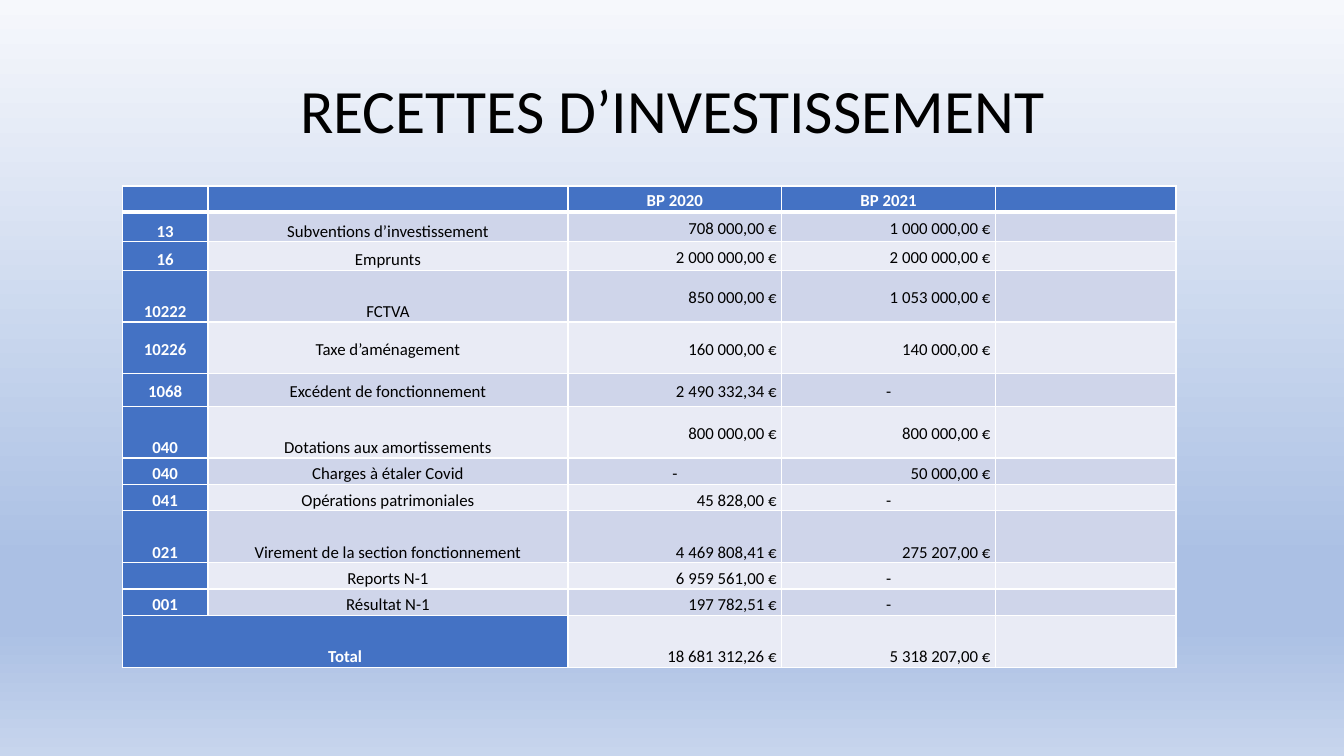
import pptx
import pptx.util
import pptx.dml.color
import pptx.enum.text
import pptx.oxml.ns
import lxml.etree

ALIGN = pptx.enum.text.PP_ALIGN
ANCHOR = pptx.enum.text.MSO_ANCHOR
MID, LOW = ANCHOR.MIDDLE, ANCHOR.BOTTOM
WIDE, HIGH = pptx.util.Inches(13.33), pptx.util.Inches(7.5)
FONT = "Calibri"
BLUE, WHITE, BLACK = "4472C4", "FFFFFF", "000000"
BANDS = ["E9EBF5", "CFD5EA"]
STOPS = [(0, "F6F8FC"), (74, "ABC0E4"), (83, "ABC0E4"), (100, "C7D5ED")]
COLS = [0.85, 3.57, 2.12, 2.12, 1.79]

# height, label anchor, value anchor, texts
ROWS = [
    (0.26, MID, MID, ["", "", "BP 2020", "BP 2021", ""]),
    (0.29, LOW, MID, ["13", "Subventions d’investissement", "708 000,00 €", "1 000 000,00 €", ""]),
    (0.28, LOW, MID, ["16", "Emprunts", "2 000 000,00 €", "2 000 000,00 €", ""]),
    (0.51, LOW, MID, ["10222", "FCTVA", "850 000,00 €", "1 053 000,00 €", ""]),
    (0.51, MID, MID, ["10226", "Taxe d’aménagement", "160 000,00 €", "140 000,00 €", ""]),
    (0.32, MID, MID, ["1068", "Excédent de fonctionnement", "2 490 332,34 €", "-", ""]),
    (0.51, LOW, MID, ["040", "Dotations aux amortissements", "800 000,00 €", "800 000,00 €", ""]),
    (0.26, LOW, LOW, ["040", "Charges à étaler Covid", "-", "50 000,00 €", ""]),
    (0.26, LOW, LOW, ["041", "Opérations patrimoniales", "45 828,00 €", "-", ""]),
    (0.51, LOW, LOW, ["021", "Virement de la section fonctionnement", "4 469 808,41 €", "275 207,00 €", ""]),
    (0.26, LOW, LOW, ["", "Reports N-1", "6 959 561,00 €", "-", ""]),
    (0.26, LOW, LOW, ["001", "Résultat N-1", "197 782,51 €", "-", ""]),
    (0.51, LOW, LOW, ["Total", "", "18 681 312,26 €", "5 318 207,00 €", ""]),
]


def color(code):
    return pptx.dml.color.RGBColor.from_string(code)


def child(node, tag, **attrs):
    return lxml.etree.SubElement(node, pptx.oxml.ns.qn(tag), **attrs)


def place(left, top, width, height):
    return [round(WIDE * left), round(HIGH * top), round(WIDE * width), round(HIGH * height)]


def paint(slide):
    fill = slide.background.fill
    fill.gradient()
    fill.gradient_angle = 270
    stops = slide.element.find(".//" + pptx.oxml.ns.qn("a:gsLst"))
    for stop in list(stops):
        stops.remove(stop)
    for share, code in STOPS:
        child(child(stops, "a:gs", pos=str(share * 1000)), "a:srgbClr", val=code)


def write(para, text, size, code, bold, align, space):
    para.text = text
    para.alignment = align
    para.line_spacing = space
    font = para.font
    font.name, font.size, font.bold = FONT, pptx.util.Pt(size), bold
    font.color.rgb = color(code)


def title(slide, text):
    frame = slide.shapes.add_textbox(*place(0.069, 0.053, 0.863, 0.193)).text_frame
    frame.word_wrap = True
    frame.vertical_anchor = MID
    write(frame.paragraphs[0], text, 44, BLACK, False, ALIGN.CENTER, 0.9)


def edge(cell, side, points):
    line = child(cell._tc.get_or_add_tcPr(), "a:ln" + side, w=str(pptx.util.Pt(points)))
    child(child(line, "a:solidFill"), "a:srgbClr", val=WHITE)


def style(cell, text, row, col, anchor):
    head = row == 0 or col == 0
    for side in "LRTB":
        thick = (row, side) in [(0, "B"), (1, "T")]
        edge(cell, side, 3 if thick else 1)
    cell.fill.solid()
    cell.fill.fore_color.rgb = color(BLUE if head else BANDS[row % 2])
    cell.vertical_anchor = anchor
    cell.margin_left = cell.margin_right = pptx.util.Inches(0.05)
    cell.margin_top = cell.margin_bottom = 0
    money = text.endswith("€")
    para = cell.text_frame.paragraphs[0]
    write(para, text, 12, WHITE if head else BLACK, head,
          ALIGN.RIGHT if money else ALIGN.CENTER, 1.15)
    para.space_after = pptx.util.Pt(10)
    if not text:
        child(para._p, "a:endParaRPr", sz="1200")


def budget(slide):
    box = place(0.091, 0.246, 0.784, 0.637)
    table = slide.shapes.add_table(len(ROWS), len(COLS), *box).table
    table.first_row = table.horz_banding = False
    for part, size in zip(table.columns, COLS):
        part.width = round(box[2] * size / sum(COLS))
    total = sum(row[0] for row in ROWS)
    for row, (size, label, value, texts) in enumerate(ROWS):
        table.rows[row].height = round(box[3] * size / total)
        for col, text in enumerate(texts):
            style(table.cell(row, col), text, row, col, label if col < 2 else value)
    last = len(ROWS) - 1
    table.cell(last, 0).merge(table.cell(last, 1))


def main():
    deck = pptx.Presentation()
    deck.slide_width, deck.slide_height = WIDE, HIGH
    slide = deck.slides.add_slide(deck.slide_layouts[6])
    paint(slide)
    title(slide, "RECETTES D’INVESTISSEMENT")
    budget(slide)
    deck.save("out.pptx")


if __name__ == "__main__":
    main()
